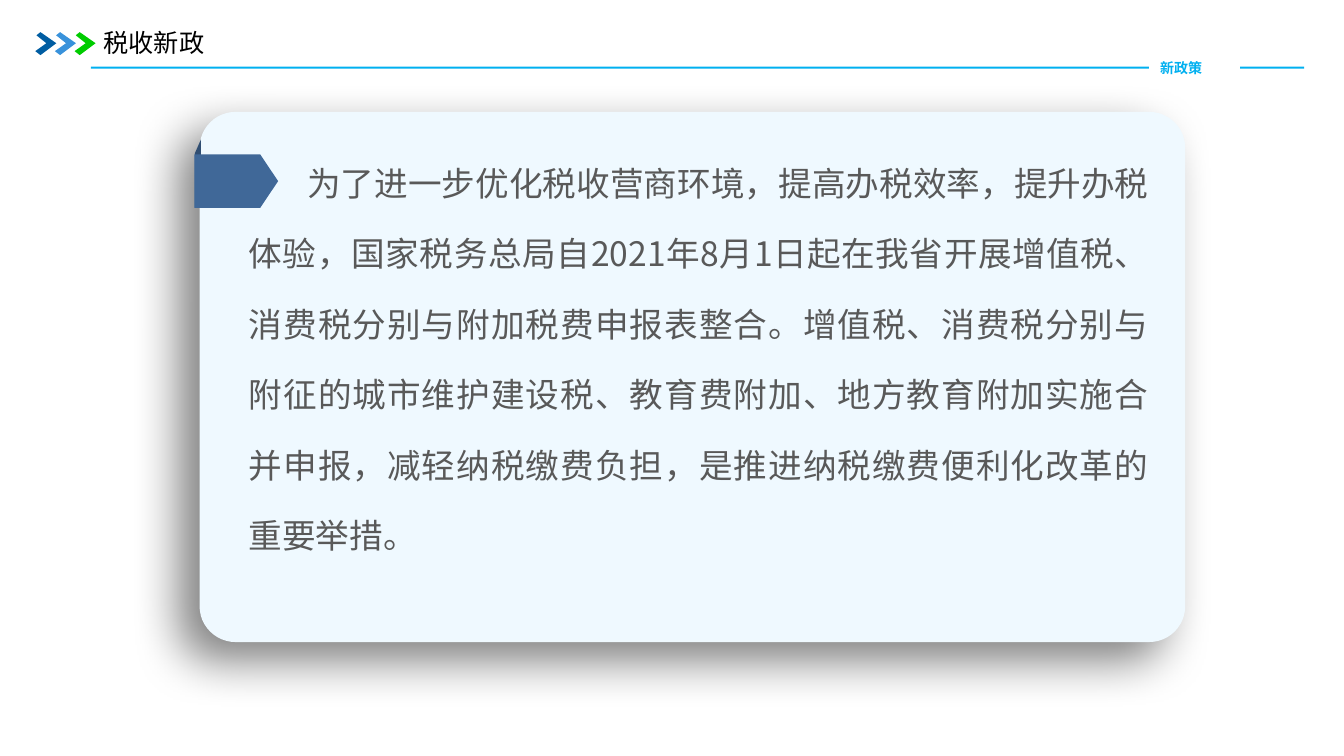
"""Build the slide that introduces the new tax policy."""
from lxml.etree import SubElement
from pptx import Presentation
from pptx.dml.color import RGBColor
from pptx.enum.shapes import MSO_SHAPE as Preset
from pptx.enum.text import MSO_ANCHOR as Anchor, MSO_AUTO_SIZE as AutoSize, PP_ALIGN as Align
from pptx.oxml.ns import qn
from pptx.util import Cm, Pt

FONT = "Noto Sans CJK SC"
TITLE = "税收新政"
LABEL = "新政策"
POLICY = (
    "为了进一步优化税收营商环境，提高办税效率，提升办税体验，"
    "国家税务总局自2021年8月1日起在我省开展增值税、消费税分别与附加税费申报表整合。"
    "增值税、消费税分别与附征的城市维护建设税、教育费附加、地方教育附加实施合并申报，"
    "减轻纳税缴费负担，是推进纳税缴费便利化改革的重要举措。"
)
CHEVRON_COLORS = ["005DA2", "3992DB", "00CC00"]
CHEVRON_OUTLINE = [(0.03, 0.08), (0.13, 0), (0.53, 0.28), (0.13, 0.58), (0, 0.48), (0.28, 0.28)]
CHEVRON_LEFT, CHEVRON_TOP, CHEVRON_STEP = 0.89, 0.81, 0.495


def rgb(color):
    return RGBColor.from_string(color)


def paint(shape, color):
    shape.shadow.inherit = False
    shape.fill.solid()
    shape.fill.fore_color.rgb = rgb(color)
    shape.line.fill.background()
    return shape


def add_block(slide, preset, box, color):
    return paint(slide.shapes.add_shape(preset, *map(Cm, box)), color)


def write(shape, text, size, color, align, anchor, inset=(0, 0), bold=False):
    frame = shape.text_frame
    frame.text = text
    frame.word_wrap = True
    frame.auto_size = AutoSize.NONE
    frame.vertical_anchor = anchor
    frame.margin_left = frame.margin_right = Cm(inset[0])
    frame.margin_top = frame.margin_bottom = Cm(inset[1])
    paragraph = frame.paragraphs[0]
    paragraph.alignment = align
    font = paragraph.runs[0].font
    font.size, font.bold, font.name = Pt(size), bold, FONT
    font.color.rgb = rgb(color)
    SubElement(font._element, qn("a:ea"), typeface=FONT)
    return paragraph


def place(shape, box):
    shape.left, shape.top, shape.width, shape.height = map(Cm, box)


def add_header(slide):
    add_block(slide, Preset.RECTANGLE, (2.29, 1.68, 30.58, 0.05), "00B0F0")
    label = add_block(slide, Preset.RECTANGLE, (28.96, 1.35, 2.29, 0.71), "FFFFFF")
    write(label, LABEL, 10, "00B0F0", Align.LEFT, Anchor.MIDDLE, (0.28, 0.15), True)
    for order, color in enumerate(CHEVRON_COLORS):
        left = CHEVRON_LEFT + order * CHEVRON_STEP
        corners = [(Cm(left + x), Cm(CHEVRON_TOP + y)) for x, y in CHEVRON_OUTLINE]
        outline = slide.shapes.build_freeform(*corners[0])
        outline.add_line_segments(corners[1:])
        paint(outline.convert_to_shape(), color)
    title = slide.shapes.title
    place(title, (2.31, 0.53, 10.29, 1.07))
    write(title, TITLE, 18, "000000", Align.LEFT, Anchor.TOP, (0.3, 0.15))


def add_card(slide):
    card = add_block(slide, Preset.ROUNDED_RECTANGLE, (5.03, 2.82, 24.84, 13.36), "EFF9FF")
    card.adjustments[0] = 0.068
    effects = card._element.spPr.find(qn("a:effectLst"))
    shadow = SubElement(effects, qn("a:outerShdw"), blurRad=str(Pt(35)), dist=str(Pt(20)),
                        dir=str(135 * 60000), algn="tr", rotWithShape="0")
    black = SubElement(shadow, qn("a:srgbClr"), val="000000")
    SubElement(black, qn("a:alpha"), val="50000")

    fold = add_block(slide, Preset.FLOWCHART_DATA, (4.14, 4.29, 1.7, 0.15), "304E72")
    fold.rotation = 270
    fold._element.spPr.xfrm.set("flipH", "1")
    tag = add_block(slide, Preset.PENTAGON, (4.9, 3.89, 2.11, 1.35), "406898")
    tag.adjustments[0] = 0.335


def add_policy(slide):
    policy = slide.placeholders[1]
    place(policy, (6.27, 3.33, 22.68, 10.77))
    paragraph = write(policy, POLICY, 24, "595959", Align.JUSTIFY, Anchor.TOP)
    paragraph.line_spacing = 1.75
    paragraph.space_before = Pt(0)
    properties = paragraph._p.get_or_add_pPr()
    properties.set("marL", "0")
    properties.set("indent", str(Cm(1.47)))
    SubElement(properties, qn("a:buNone"))
    slide.shapes._spTree.append(policy._element)


def main():
    deck = Presentation()
    deck.slide_width, deck.slide_height = Cm(33.87), Cm(19.05)
    slide = deck.slides.add_slide(deck.slide_layouts[1])
    add_header(slide)
    add_card(slide)
    add_policy(slide)
    deck.save("out.pptx")


if __name__ == "__main__":
    main()
